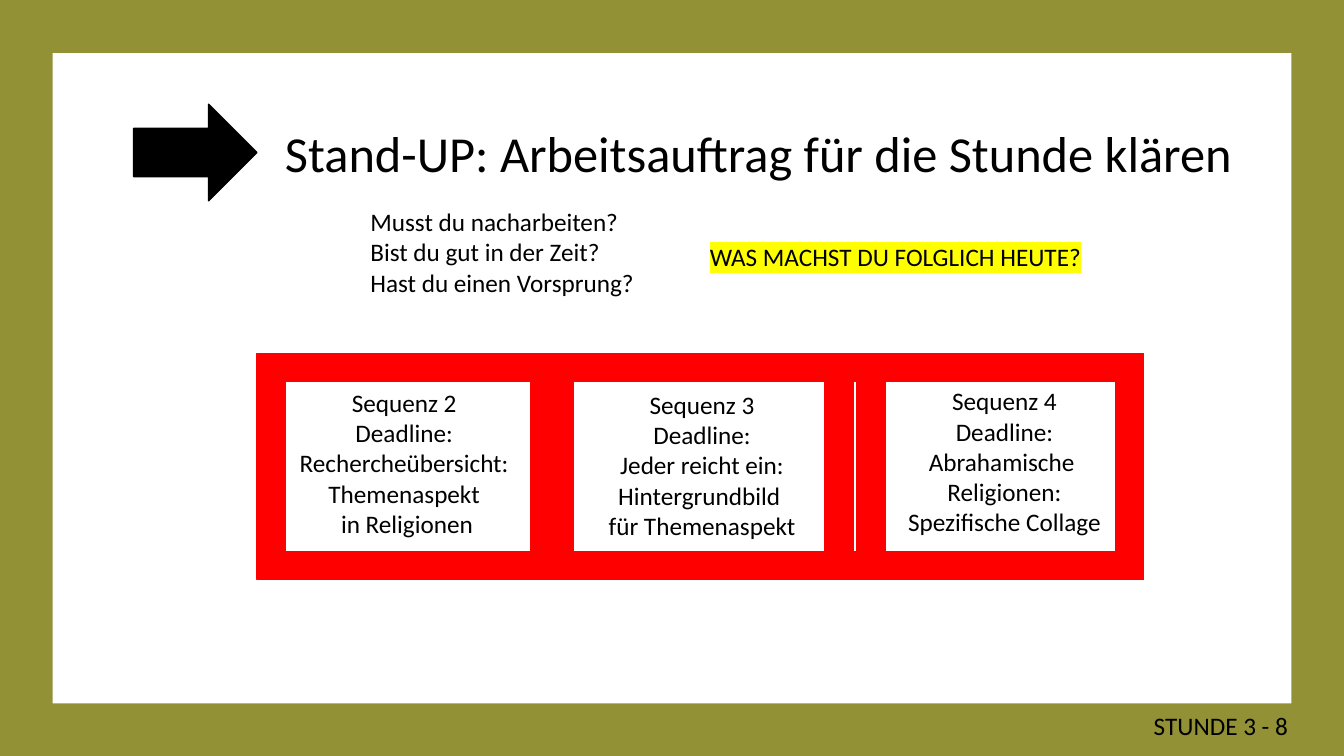
import pptx
import pptx.util
import pptx.dml.color
import pptx.enum.shapes
import pptx.enum.text
import pptx.oxml.ns
import lxml.etree

Pt = pptx.util.Pt
SHAPE = pptx.enum.shapes.MSO_SHAPE
ALIGN = pptx.enum.text.PP_ALIGN
COLORS = {
    "olive": "929136",
    "white": "FFFFFF",
    "black": "000000",
    "red": "FF0000",
    "yellow": "FFFF00",
}
WIDTH, HEIGHT = 960, 540
FRAME_TOP, FRAME_HEIGHT = 252.5, 161.5

# frame left, frame width, text box (left, top, width, height), lines
SEQUENCES = [
    (183.5, 215.5, (206, 273, 165.5, 116.5),
     ["Sequenz 2", "Deadline:", "Rechercheübersicht:", "Themenaspekt", " in Religionen"]),
    (389.5, 242.5, (426.25, 274.5, 150.5, 138),
     ["Sequenz 3", "Deadline:", "Jeder reicht ein:", "Hintergrundbild ", "für Themenaspekt"]),
    (589, 228, (640.5, 272, 154, 138),
     ["Sequenz 4", "Deadline:", "Abrahamische ", "Religionen:", "Spezifische Collage"]),
]


def rgb(name):
    return pptx.dml.color.RGBColor.from_string(COLORS[name])


class SlideBuilder:
    font_name = "Calibri"
    text_color = "black"

    def __init__(self, slide):
        self.slide = slide

    def shape(self, kind, left, top, width, height, fill, outlined=False):
        shape = self.slide.shapes.add_shape(kind, Pt(left), Pt(top), Pt(width), Pt(height))
        shape.shadow.inherit = False
        shape.fill.solid()
        shape.fill.fore_color.rgb = rgb(fill)
        if outlined:
            shape.line.color.rgb = rgb(fill)
            shape.line.width = Pt(1)
        else:
            shape.line.fill.background()

    def text(self, left, top, width, height, lines, size=18, align=ALIGN.LEFT, highlight=None):
        box = self.slide.shapes.add_textbox(Pt(left), Pt(top), Pt(width), Pt(height))
        frame = box.text_frame
        frame.word_wrap = False
        frame.auto_size = pptx.enum.text.MSO_AUTO_SIZE.SHAPE_TO_FIT_TEXT
        frame.text = "\n".join(lines)
        for paragraph in frame.paragraphs:
            paragraph.alignment = align
            paragraph.font.name = self.font_name
            paragraph.font.size = Pt(size)
            paragraph.font.color.rgb = rgb(self.text_color)
            if highlight:
                self.highlight(paragraph.runs[0], highlight)

    def highlight(self, run, color):
        qn = pptx.oxml.ns.qn
        marker = lxml.etree.SubElement(run.font._element, qn("a:highlight"))
        lxml.etree.SubElement(marker, qn("a:srgbClr"), val=COLORS[color])


def main():
    presentation = pptx.Presentation()
    presentation.slide_width, presentation.slide_height = Pt(WIDTH), Pt(HEIGHT)
    builder = SlideBuilder(presentation.slides.add_slide(presentation.slide_layouts[6]))

    builder.shape(SHAPE.RECTANGLE, 0, 0, WIDTH, HEIGHT, "olive")
    builder.shape(SHAPE.RECTANGLE, 37.5, 38, 885, 464.5, "white")
    builder.shape(SHAPE.RIGHT_ARROW, 95.5, 74.5, 88, 69, "black", outlined=True)
    for left, width, _, _ in SEQUENCES:
        builder.shape(SHAPE.FRAME, left, FRAME_TOP, width, FRAME_HEIGHT, "red", outlined=True)

    builder.text(196.5, 83.5, 697.5, 51, ["Stand-UP: Arbeitsauftrag für die Stunde klären"], size=36)
    builder.text(817, 503.5, 111.5, 29, ["STUNDE 3 - 8"])
    builder.text(257.5, 144, 205, 72.5,
                 ["Musst du nacharbeiten?", "Bist du gut in der Zeit?", "Hast du einen Vorsprung?"])
    builder.text(500, 168.5, 282.5, 29, ["WAS MACHST DU FOLGLICH HEUTE?"], highlight="yellow")
    for _, _, text_box, lines in SEQUENCES:
        builder.text(*text_box, lines, align=ALIGN.CENTER)

    presentation.save("out.pptx")


if __name__ == "__main__":
    main()
